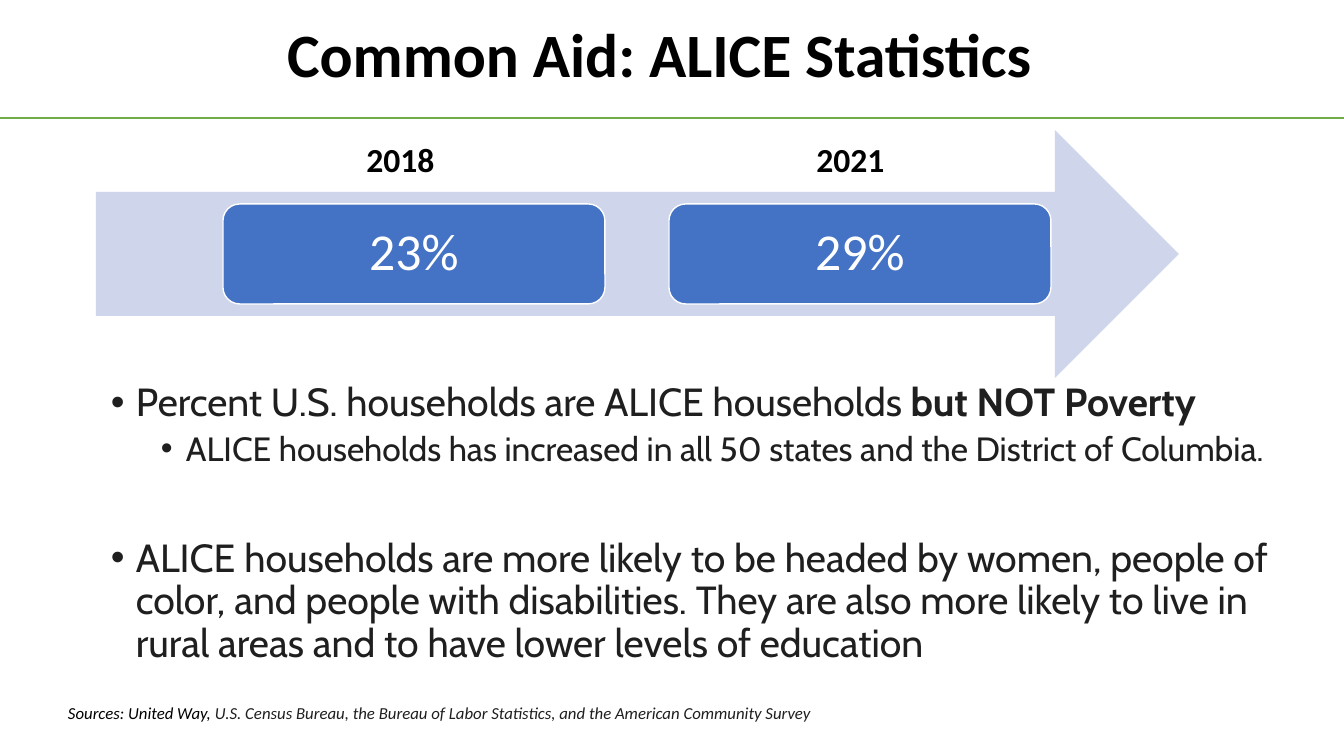
from dataclasses import dataclass

from lxml.etree import SubElement
from pptx import Presentation
from pptx.dml.color import RGBColor
from pptx.enum.shapes import MSO_CONNECTOR, MSO_SHAPE
from pptx.enum.text import MSO_ANCHOR, PP_ALIGN
from pptx.oxml.ns import qn
from pptx.util import Emu, Pt

PX = 914400 / 100.8


@dataclass(frozen=True)
class Theme:
    black: str = "000000"
    ink: str = "1F1F1F"
    white: str = "FFFFFF"
    blue: str = "4472C4"
    pale_blue: str = "CFD5EA"
    green: str = "70AD47"
    heading_font: str = "Calibri"
    body_font: str = "Cabin"
    title_size: int = 44
    percent_size: int = 37
    body_size: int = 28
    sub_size: int = 24
    source_size: int = 12


theme = Theme()


def px(*lengths):
    return [Emu(round(length * PX)) for length in lengths]


def add_text(paragraph, text, size, color=theme.black, font=theme.heading_font,
             bold=False, italic=False, align=PP_ALIGN.LEFT, spacing=None):
    paragraph.alignment = align
    if spacing:
        paragraph.line_spacing = spacing
    run = paragraph.add_run()
    run.text = text
    run.font.size = Pt(size)
    run.font.name = font
    run.font.bold = bold
    run.font.italic = italic
    run.font.color.rgb = RGBColor.from_string(color)


presentation = Presentation()
presentation.slide_width, presentation.slide_height = px(1344, 756)
slide = presentation.slides.add_slide(presentation.slide_layouts[5])
shapes = slide.shapes

# Title and the rule below it
title = shapes.title
title.left, title.top, title.width, title.height = px(277, 15, 1008, 86)
title.text_frame.vertical_anchor = MSO_ANCHOR.MIDDLE
add_text(title.text_frame.paragraphs[0], "Common Aid: ALICE Statistics",
         theme.title_size, bold=True, spacing=0.9)

rule = shapes.add_connector(MSO_CONNECTOR.STRAIGHT, *px(0, 118, 1344, 118))
rule.line.color.rgb = RGBColor.from_string(theme.green)
rule.line.width = Pt(1.25)
SubElement(rule._element.spPr, qn("a:effectLst"))

# Arrow of time
arrow = shapes.add_shape(MSO_SHAPE.RIGHT_ARROW, *px(96, 130, 1083, 248))
arrow.shadow.inherit = False
arrow.fill.solid()
arrow.fill.fore_color.rgb = RGBColor.from_string(theme.pale_blue)
arrow.line.fill.background()

# Yearly shares with their labels
for index, (year, percent) in enumerate([("2018", "23%"), ("2021", "29%")]):
    card = shapes.add_shape(MSO_SHAPE.ROUNDED_RECTANGLE,
                            *px(223 + 446 * index, 204, 382, 100))
    card.shadow.inherit = False
    card.fill.solid()
    card.fill.fore_color.rgb = RGBColor.from_string(theme.blue)
    card.line.color.rgb = RGBColor.from_string(theme.white)
    card.line.width = Pt(1)
    card.text_frame.vertical_anchor = MSO_ANCHOR.MIDDLE
    add_text(card.text_frame.paragraphs[0], percent, theme.percent_size,
             color=theme.white, align=PP_ALIGN.CENTER, spacing=0.9)

    label = shapes.add_textbox(*px(308 + 450 * index, 134, 185, 50))
    label.text_frame.word_wrap = True
    add_text(label.text_frame.paragraphs[0], year, theme.sub_size,
             bold=True, align=PP_ALIGN.CENTER)

# Findings: level, space before, and runs of text with their weight
findings = [
    (0, 0, [("Percent U.S. households are ALICE households ", False),
            ("but NOT Poverty", True)]),
    (1, 5, [("ALICE households has increased in all 50 states and the "
             "District of Columbia.", False)]),
    (0, 50, [("ALICE households are more likely to be headed by women, people "
              "of color, and people with disabilities. They are also more "
              "likely to live in rural areas and to have lower levels of "
              "education", False)]),
]
body = shapes.add_textbox(*px(101, 378, 1184, 320)).text_frame
body.word_wrap = True
for index, (level, space, runs) in enumerate(findings):
    paragraph = body.add_paragraph() if index else body.paragraphs[0]
    paragraph.level = level
    properties = paragraph._p.get_or_add_pPr()
    hanging, margin = px(25, 25 + 50 * level)
    properties.set("marL", str(margin))
    properties.set("indent", str(-hanging))
    SubElement(properties, qn("a:buFont"), typeface="Arial")
    SubElement(properties, qn("a:buChar"), char="•")
    paragraph.space_before = Pt(space)
    for text, bold in runs:
        add_text(paragraph, text, theme.sub_size if level else theme.body_size,
                 color=theme.ink, font=theme.body_font, bold=bold, spacing=0.9)

# Sources
sources = shapes.add_textbox(*px(58, 698, 824, 30)).text_frame
sources.word_wrap = True
for text, color in [
    ("Sources: United Way, ", theme.black),
    ("U.S. Census Bureau, the Bureau of Labor Statistics, and the American "
     "Community Survey", theme.ink),
]:
    add_text(sources.paragraphs[0], text, theme.source_size, color=color, italic=True)

presentation.save("out.pptx")
